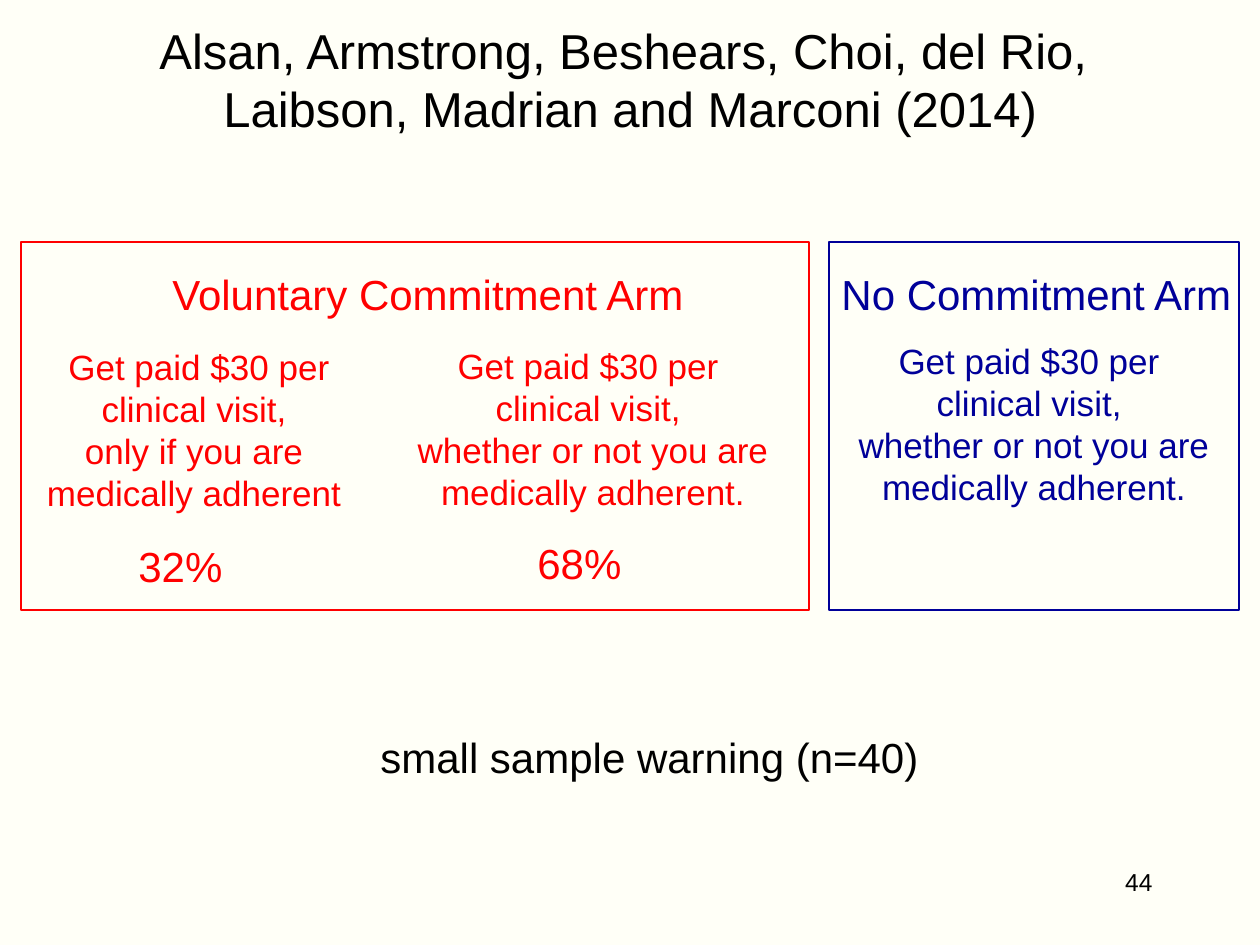
from pptx import Presentation
from pptx.dml.color import RGBColor
from pptx.enum.shapes import MSO_SHAPE
from pptx.enum.text import MSO_ANCHOR, MSO_AUTO_SIZE, PP_ALIGN
from pptx.util import Emu, Pt

EMU_PER_PX = 914400 / 126
FONT = "Arial"
IVORY = RGBColor(0xFF, 0xFF, 0xF7)
BLACK = RGBColor(0x00, 0x00, 0x00)
RED = RGBColor(0xFF, 0x00, 0x00)
NAVY = RGBColor(0x00, 0x00, 0x99)
LEFT, CENTER, RIGHT = PP_ALIGN.LEFT, PP_ALIGN.CENTER, PP_ALIGN.RIGHT
MIDDLE = MSO_ANCHOR.MIDDLE
RECTANGLE = MSO_SHAPE.RECTANGLE
FIT_SHAPE, NO_FIT = MSO_AUTO_SIZE.SHAPE_TO_FIT_TEXT, MSO_AUTO_SIZE.NONE
TITLE_ONLY = 5


def px(*lengths):
    return [Emu(round(length * EMU_PER_PX)) for length in lengths]


class Page:
    """The current slide and its text style."""

    def __init__(self, deck):
        self.slide = deck.slides.add_slide(deck.slide_layouts[TITLE_ONLY])
        fill = self.slide.background.fill
        fill.solid()
        fill.fore_color.rgb = IVORY

    def set_text(self, frame, lines, size, color, align):
        frame.text = "\n".join(lines)
        for para in frame.paragraphs:
            para.alignment = align
            para.font.name = FONT
            para.font.size = Pt(size)
            para.font.color.rgb = color

    def title(self, text, left, top, width, height):
        box = self.slide.shapes.title
        box.left, box.top, box.width, box.height = px(left, top, width, height)
        frame = box.text_frame
        frame.word_wrap = True
        frame.auto_size = NO_FIT
        frame.vertical_anchor = MIDDLE
        self.set_text(frame, [text], 28, BLACK, CENTER)

    def text(self, lines, left, top, width, height, size, color,
             align=LEFT, wrap=False, fit=FIT_SHAPE):
        box = self.slide.shapes.add_textbox(*px(left, top, width, height))
        frame = box.text_frame
        frame.word_wrap = wrap
        frame.auto_size = fit
        self.set_text(frame, lines, size, color, align)

    def label(self, text, left, top, width, color):
        self.text([text], left, top, width, 63, 24, color)

    def terms(self, lines, left, top, width, color):
        self.text(lines, left, top, width, 183, 20, color, CENTER, wrap=True)

    def frame(self, left, top, width, height, color):
        box = self.slide.shapes.add_shape(RECTANGLE, *px(left, top, width, height))
        box.shadow.inherit = False
        box.fill.background()
        box.line.color.rgb = color
        box.line.width = Pt(0.75)


def main():
    deck = Presentation()
    deck.slide_width, deck.slide_height = px(1260, 945)
    page = Page(deck)
    page.title("Alsan, Armstrong, Beshears, Choi, del Rio, \v"
               "Laibson, Madrian and Marconi (2014)", 63, 0, 1134, 158)

    # Frames of the two arms
    for left, width, color in ((21, 788, RED), (829, 410, NAVY)):
        page.frame(left, 242, width, 368, color)

    # Arm headings
    page.label("Voluntary Commitment Arm", 160, 262, 542, RED)
    page.label("No Commitment Arm", 829, 262, 420, NAVY)

    # Payment terms
    conditional = ["Get paid $30 per clinical visit, ", "only if you are ",
                   "medically adherent "]
    unconditional = ["Get paid $30 per ", "clinical visit, ",
                     "whether or not you are medically adherent."]
    page.terms(conditional, 10, 339, 378, RED)
    page.terms(unconditional, 388, 338, 410, RED)
    page.terms(unconditional, 829, 333, 410, NAVY)

    # Shares choosing each option
    page.label("32%", 126, 534, 111, RED)
    page.label("68%", 525, 531, 111, RED)

    # Caveat and page number
    page.label("small sample warning (n=40)", 368, 725, 570, BLACK)
    page.text(["44"], 903, 861, 262, 63, 14, BLACK, RIGHT, wrap=True, fit=NO_FIT)

    deck.save("out.pptx")


if __name__ == "__main__":
    main()
